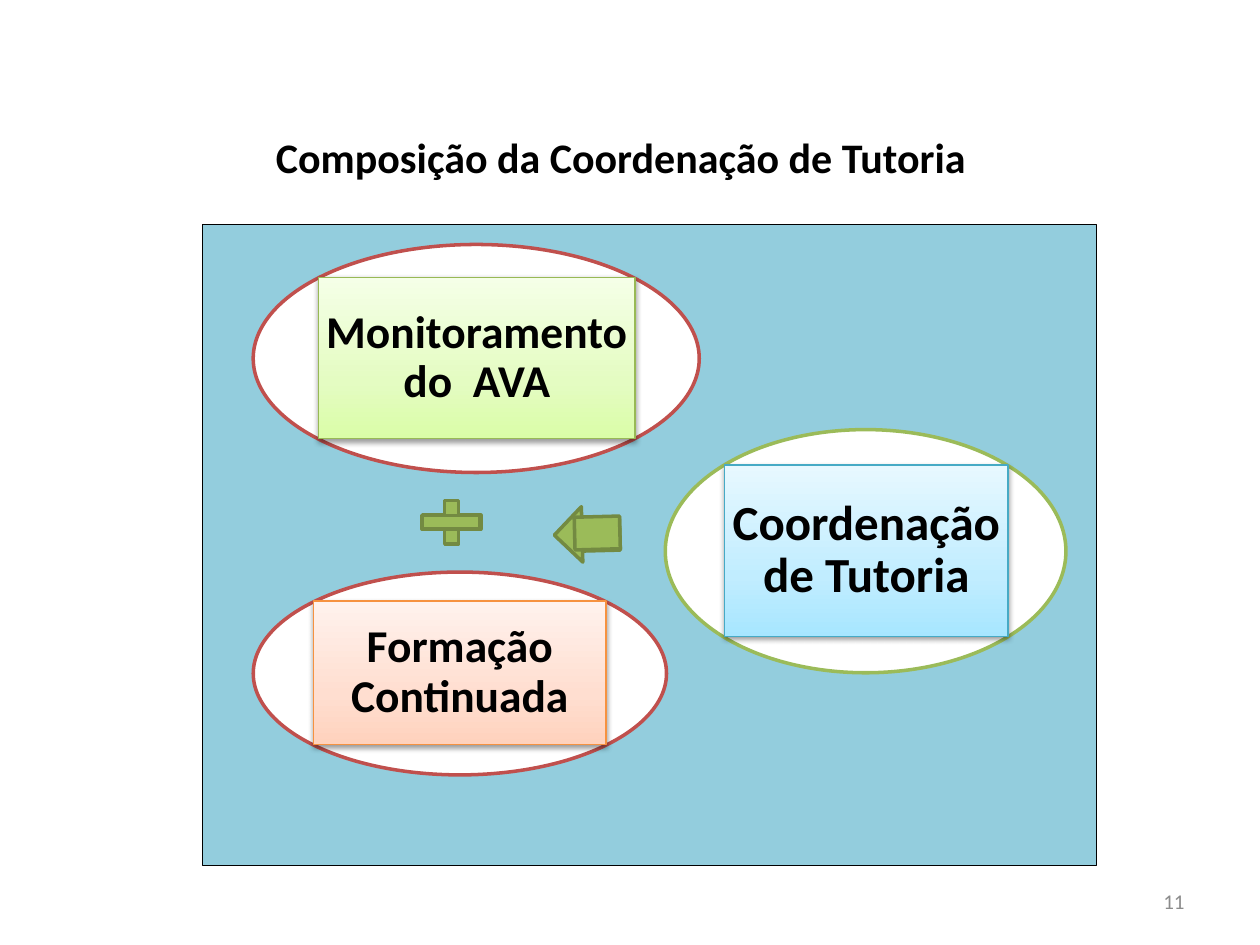
from lxml import etree
from pptx import Presentation
from pptx.dml.color import RGBColor
from pptx.enum import shapes as es, text as et
from pptx.oxml.ns import qn
from pptx.util import Inches, Pt

HUES = {"white": "FFFFFF", "black": "000000", "gray": "8C8C8C", "panel": "93CDDD",
        "red": "C0504D", "green": "9BBB59", "moss": "738A42"}
KIND = es.MSO_SHAPE
ALIGN = et.PP_ALIGN


def draw(home, kind, box, fill, line, width):
    item = home.shapes.add_shape(kind, *map(Inches, box))
    item.shadow.inherit = False
    item.fill.solid()
    item.fill.fore_color.rgb = RGBColor.from_string(fill)
    item.line.color.rgb = RGBColor.from_string(line)
    item.line.width = Pt(width)
    return item


def write(item, words, size, color="black", bold=True, align=ALIGN.CENTER,
          anchor=et.MSO_ANCHOR.MIDDLE, inset=None, space=None):
    frame = item.text_frame
    frame.word_wrap = True
    frame.auto_size = et.MSO_AUTO_SIZE.NONE
    frame.vertical_anchor = anchor
    if inset is not None:
        frame.margin_left = frame.margin_right = Inches(inset)
        frame.margin_top = frame.margin_bottom = Inches(inset)
    para = frame.paragraphs[0]
    para.alignment = align
    para.line_spacing = space
    run = para.add_run()
    run.text = words
    run.font.name = "Calibri"
    run.font.size = Pt(size)
    run.font.bold = bold
    run.font.color.rgb = RGBColor.from_string(HUES[color])


deck = Presentation()
deck.slide_width, deck.slide_height = Inches(10), Inches(7.5)
slide = deck.slides.add_slide(deck.slide_layouts[5])

# Title
title = slide.shapes.title
title.left, title.top = Inches(2.09), Inches(0.99)
title.width, title.height = Inches(6.61), Inches(0.5)
write(title, "Composição da Coordenação de Tutoria", 24,
      align=ALIGN.LEFT, anchor=et.MSO_ANCHOR.TOP)

# Background panel
draw(slide, KIND.RECTANGLE, (1.61, 1.78, 7.09, 5.09), HUES["panel"], HUES["black"], 0.5)

# Ovals with a shaded label: oval, ring, label, edge, stops from the bottom, words, size
teams = [
    ((2.01, 1.94, 3.54, 1.81), "red", (2.53, 2.2, 2.51, 1.28), "98B955",
     ("DAFDA7", "E4FCC2", "F5FFE7"), "Monitoramento do  AVA", 26),
    ((2.01, 4.54, 3.28, 1.61), "red", (2.49, 4.77, 2.32, 1.14), "F69240",
     ("FFD2BD", "FFDED0", "FFF2ED"), "Formação Continuada", 26),
    ((5.28, 3.41, 3.18, 1.93), "green", (5.75, 3.69, 2.25, 1.36), "46AAC5",
     ("A7E6FF", "C1EDFF", "E7F8FF"), "Coordenação de Tutoria", 28),
]
for oval, ring, box, edge, stops, words, size in teams:
    group = slide.shapes.add_group_shape()
    draw(group, KIND.OVAL, oval, HUES["white"], HUES[ring], 2)
    label = draw(group, KIND.RECTANGLE, box, stops[0], edge, 0.75)
    write(label, words, size, inset=0.02, space=0.9)

    # Three-stop gradient
    label.fill.gradient()
    label.fill.gradient_angle = 90
    props = label._element.spPr
    ramp = props.find(".//" + qn("a:gsLst"))
    for old in list(ramp):
        ramp.remove(old)
    for place, tint in zip((0, 35, 100), stops):
        stop = etree.SubElement(ramp, qn("a:gs"), pos=str(place * 1000))
        etree.SubElement(stop, qn("a:srgbClr"), val=tint)

    # Soft shadow below
    shade = etree.SubElement(props.find(qn("a:effectLst")), qn("a:outerShdw"),
                             blurRad=str(Pt(3.1)), dist=str(Pt(1.6)),
                             dir="5400000", rotWithShape="0")
    tone = etree.SubElement(shade, qn("a:srgbClr"), val=HUES["black"])
    etree.SubElement(tone, qn("a:alpha"), val="38000")

# Plus sign and left-pointing arrow, each with a bar on top
signs = [
    (KIND.MATH_PLUS, (3.27, 3.91, 0.63, 0.47), (3.35, 4.09, 0.46, 0.11), 0),
    (KIND.RIGHT_ARROW, (4.4, 4.02, 0.52, 0.44), (4.56, 4.1, 0.36, 0.26), 178.5),
]
for kind, box, bar, turn in signs:
    group = slide.shapes.add_group_shape()
    for form, area in ((kind, box), (KIND.RECTANGLE, bar)):
        part = draw(group, form, area, HUES["green"], HUES["moss"], 2)
        part.rotation = turn
        if form == KIND.RIGHT_ARROW:
            part.adjustments[0], part.adjustments[1] = 0.6, 0.5

# Page number
page = slide.shapes.add_textbox(*map(Inches, (7.17, 6.95, 2.33, 0.4)))
write(page, "11", 12, color="gray", bold=False, align=ALIGN.RIGHT)

deck.save("out.pptx")
